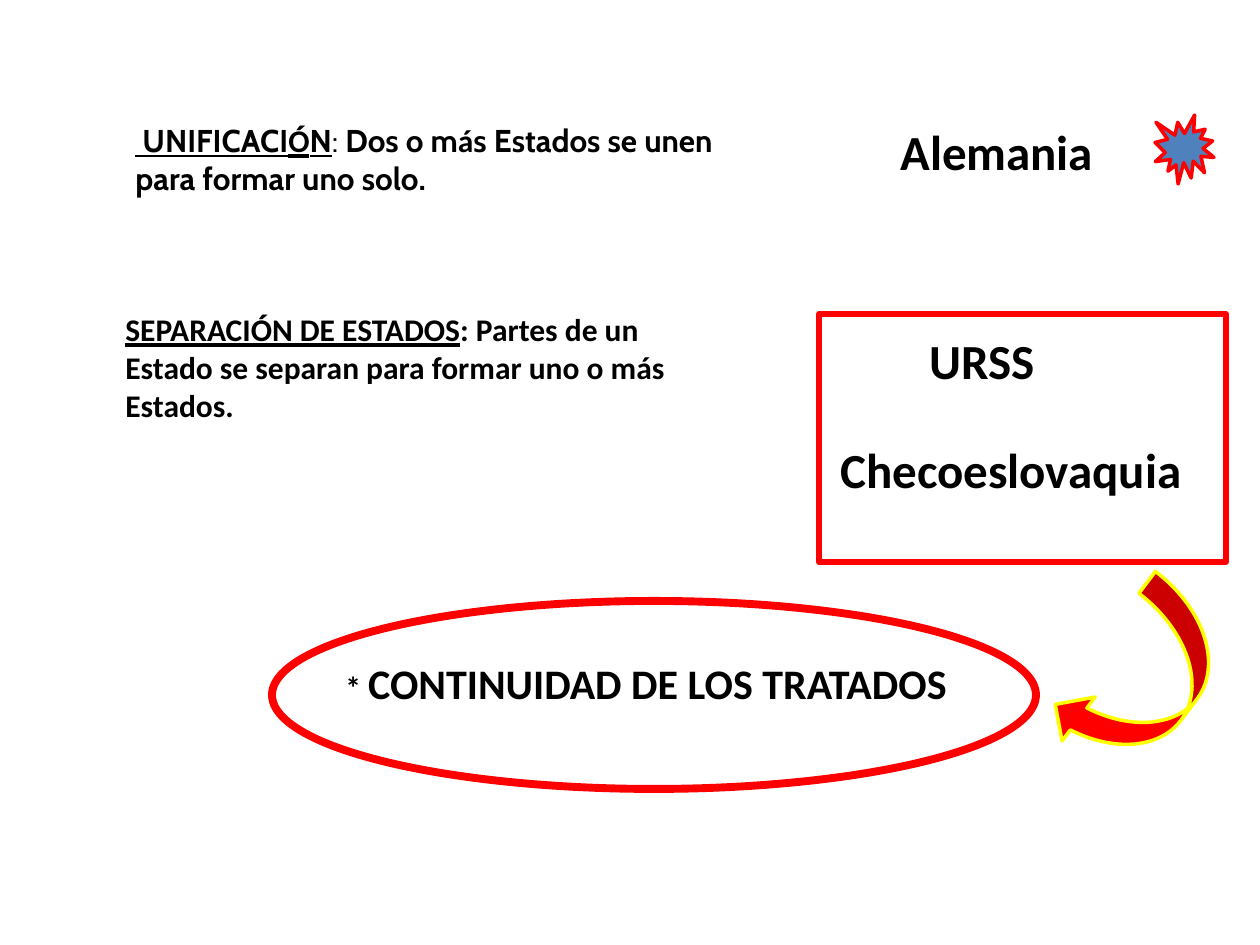
"""Build a slide on the unification and separation of states."""
from pptx import Presentation
from pptx import util as u
from pptx.dml.color import RGBColor
from pptx.enum import shapes, text

PX = u.Inches(1) / 126
COLORS = {"black": "000000", "red": "FF0000", "blue": "4F81BD", "yellow": "FFFF00"}


def px(*lengths):
    return [u.Emu(round(length * PX)) for length in lengths]


def add_text(box, wrap, runs):
    shape = slide.shapes.add_textbox(*px(*box))
    frame = shape.text_frame
    frame.word_wrap = wrap
    frame.auto_size = text.MSO_AUTO_SIZE.SHAPE_TO_FIT_TEXT
    paragraph = frame.paragraphs[0]
    for words, size, font, bold, underline in runs:
        run = paragraph.add_run()
        run.text = words
        run.font.size = u.Pt(size)
        run.font.name = font
        run.font.bold = bold
        run.font.underline = underline
        run.font.color.rgb = RGBColor.from_string(COLORS["black"])


presentation = Presentation()
presentation.slide_width, presentation.slide_height = px(1260, 945)
slide = presentation.slides.add_slide(presentation.slide_layouts[6])

add_text((123, 115, 630, 89), True, [
    (" UNIFICACI", 18, "Cabin", True, True),
    ("Ó", 18, "Calibri", True, True),
    ("N", 18, "Cabin", True, True),
    (": ", 18, "Cabin", False, False),
    ("Dos o m", 18, "Cabin", True, False),
    ("á", 18, "Calibri", True, False),
    ("s Estados se unen para formar uno solo.", 18, "Cabin", True, False),
])
add_text((113, 304, 630, 127), True, [
    ("SEPARACIÓN DE ESTADOS", 18, "Calibri", True, True),
    (": Partes de un Estado se separan para formar uno o más Estados.",
     18, "Calibri", True, False),
])
add_text((333, 651, 633, 64), False, [
    ("* ", 18, "Calibri", True, False),
    ("CONTINUIDAD DE LOS TRATADOS", 24, "Calibri", True, False),
])

countries = [
    ("Alemania", (888, 115, 221, 72), False),
    ("URSS", (917, 324, 287, 72), True),
    ("Checoeslovaquia", (828, 433, 370, 72), False),
]
for country, box, wrap in countries:
    add_text(box, wrap, [(country, 28, "Calibri", True, False)])

KIND = shapes.MSO_SHAPE
figures = [
    (KIND.EXPLOSION1, (1155, 115, 59, 69), "blue", "red", 2, 0),
    (KIND.OVAL, (272, 601, 764, 188), None, "red", 4.5, 0),
    (KIND.RECTANGLE, (819, 314, 407, 248), None, "red", 3, 0),
    (KIND.CURVED_LEFT_ARROW, (1086, 585, 110, 194), "red", "yellow", 2, 37),
]
for kind, box, fill, line, width, rotation in figures:
    shape = slide.shapes.add_shape(kind, *px(*box))
    shape.shadow.inherit = False
    shape.rotation = rotation
    if fill:
        shape.fill.solid()
        shape.fill.fore_color.rgb = RGBColor.from_string(COLORS[fill])
    else:
        shape.fill.background()
    shape.line.color.rgb = RGBColor.from_string(COLORS[line])
    shape.line.width = u.Pt(width)

presentation.save("out.pptx")
